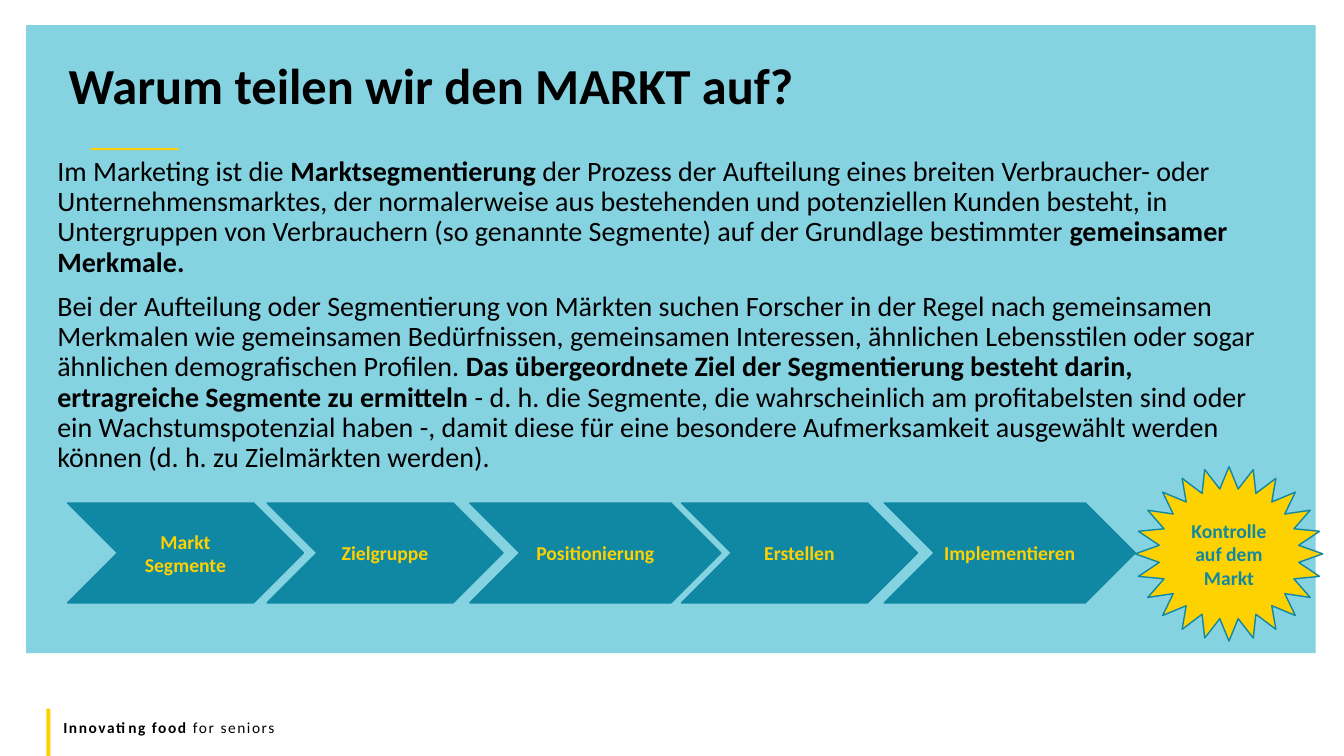
"""Build the slide on why a market is divided into segments."""
from dataclasses import dataclass

from pptx import Presentation
from pptx.dml.color import RGBColor
from pptx.enum.shapes import MSO_SHAPE
from pptx.enum.text import MSO_ANCHOR, MSO_AUTO_SIZE, PP_ALIGN
from pptx.util import Inches, Pt


@dataclass(frozen=True)
class Theme:
    font: str = "Calibri"
    panel: str = "85D2E1"
    teal: str = "1188A3"
    gold: str = "FFD100"
    bright: str = "FED100"
    ink: str = "000000"
    title: int = 36
    body: int = 20
    label: int = 14
    foot: int = 11


class Deck:
    def __init__(self, theme):
        self.theme = theme
        self.prs = Presentation()
        self.prs.slide_width = Inches(13.33)
        self.prs.slide_height = Inches(7.5)
        self.slide = self.prs.slides.add_slide(self.prs.slide_layouts[5])

    def style(self, run, size, color, bold):
        run.font.name = self.theme.font
        run.font.size = Pt(size)
        run.font.bold = bold
        run.font.color.rgb = RGBColor.from_string(color)

    def shape(self, kind, box, fill, line=None):
        shape = self.slide.shapes.add_shape(kind, *map(Inches, box))
        shape.shadow.inherit = False
        shape.fill.solid()
        shape.fill.fore_color.rgb = RGBColor.from_string(fill)
        if line:
            shape.line.color.rgb = RGBColor.from_string(line)
            shape.line.width = Pt(1)
        else:
            shape.line.fill.background()
        return shape

    def badge(self, kind, box, text, fill, color):
        frame = self.shape(kind, box, fill, self.theme.teal).text_frame
        frame.text = text
        frame.word_wrap = True
        frame.vertical_anchor = MSO_ANCHOR.MIDDLE
        para = frame.paragraphs[0]
        para.alignment = PP_ALIGN.CENTER
        self.style(para.runs[0], self.theme.label, color, True)

    def title(self, box, text):
        title = self.slide.shapes.title
        self.slide.shapes._spTree.append(title._element)
        title.left, title.top, title.width, title.height = map(Inches, box)
        frame = title.text_frame
        frame.text = text
        frame.word_wrap = True
        frame.auto_size = MSO_AUTO_SIZE.NONE
        frame.vertical_anchor = MSO_ANCHOR.TOP
        para = frame.paragraphs[0]
        para.alignment = PP_ALIGN.LEFT
        para.line_spacing = 0.8
        self.style(para.runs[0], self.theme.title, self.theme.ink, True)

    def text(self, box, paras, size, spacing=1.0, before=0, track=0):
        frame = self.slide.shapes.add_textbox(*map(Inches, box)).text_frame
        frame.word_wrap = True
        for i, parts in enumerate(paras):
            para = frame.add_paragraph() if i else frame.paragraphs[0]
            para.line_spacing = spacing
            para.space_before = Pt(before)
            for words, bold in parts:
                run = para.add_run()
                run.text = words
                self.style(run, size, self.theme.ink, bold)
                if track:
                    run._r.get_or_add_rPr().set("spc", str(track))


BODY = [
    [
        ("Im Marketing ist die ", False),
        ("Marktsegmentierung", True),
        (" der Prozess der Aufteilung eines breiten Verbraucher- oder "
         "Unternehmensmarktes, der normalerweise aus bestehenden und "
         "potenziellen Kunden besteht, in Untergruppen von Verbrauchern "
         "(so genannte Segmente) auf der Grundlage bestimmter ", False),
        ("gemeinsamer Merkmale.", True),
    ],
    [
        ("Bei der Aufteilung oder Segmentierung von Märkten suchen Forscher "
         "in der Regel nach gemeinsamen Merkmalen wie gemeinsamen "
         "Bedürfnissen, gemeinsamen Interessen, ähnlichen Lebensstilen oder "
         "sogar ähnlichen demografischen Profilen. ", False),
        ("Das übergeordnete Ziel der Segmentierung besteht darin, "
         "ertragreiche Segmente zu ermitteln ", True),
        ("- d. h. die Segmente, die wahrscheinlich am profitabelsten sind "
         "oder ein Wachstumspotenzial haben -, damit diese für eine "
         "besondere Aufmerksamkeit ausgewählt werden können (d. h. zu "
         "Zielmärkten werden).", False),
    ],
]
STEPS = [
    ("Markt Segmente", 0.67, 2.34),
    ("Zielgruppe", 2.65, 2.34),
    ("Positionierung", 4.66, 2.49),
    ("Erstellen", 6.76, 2.34),
    ("Implementieren", 8.77, 2.49),
]
FOOT = [[("Innovating food ", True), ("for seniors", False)]]


def main():
    theme = Theme()
    deck = Deck(theme)
    deck.shape(MSO_SHAPE.RECTANGLE, (0.26, 0.25, 12.79, 6.23), theme.panel)
    deck.shape(MSO_SHAPE.RECTANGLE, (0.9, 1.47, 0.87, 0.02), theme.gold)
    deck.text((0.53, 7.07, 12, 0.29), FOOT, theme.foot, track=110)
    deck.shape(MSO_SHAPE.RECTANGLE, (0.46, 7.03, 0.04, 0.47), theme.gold)
    deck.text((0.47, 1.51, 12.15, 4.23), BODY, theme.body, 0.9, 10)
    deck.title((0.58, 0.6, 11.82, 0.64), "Warum teilen wir den MARKT auf?")
    for label, left, width in STEPS:
        deck.badge(MSO_SHAPE.CHEVRON, (left, 4.99, width, 0.99), label,
                   theme.teal, theme.bright)
    deck.badge(MSO_SHAPE.STAR_24_POINT, (11.26, 4.63, 1.86, 1.73),
               "Kontrolle auf dem Markt", theme.bright, theme.teal)
    deck.prs.save("out.pptx")


if __name__ == "__main__":
    main()
